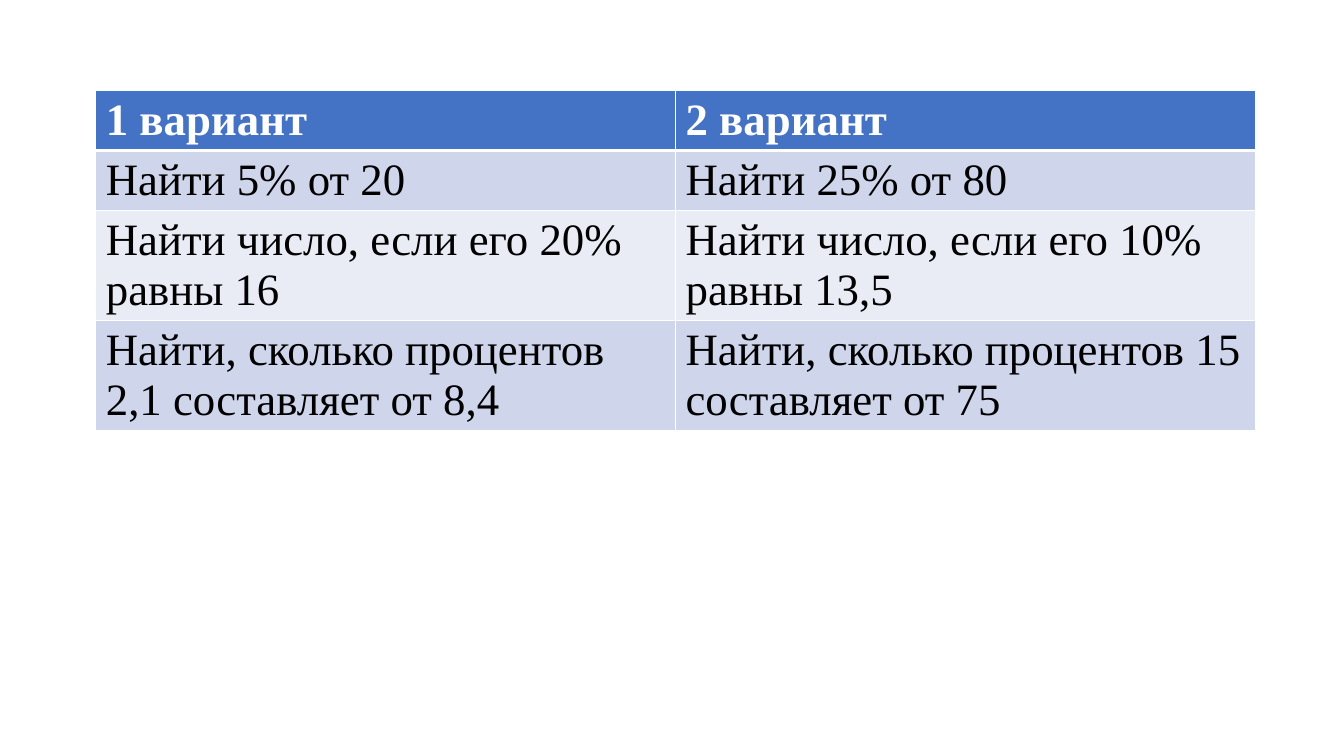
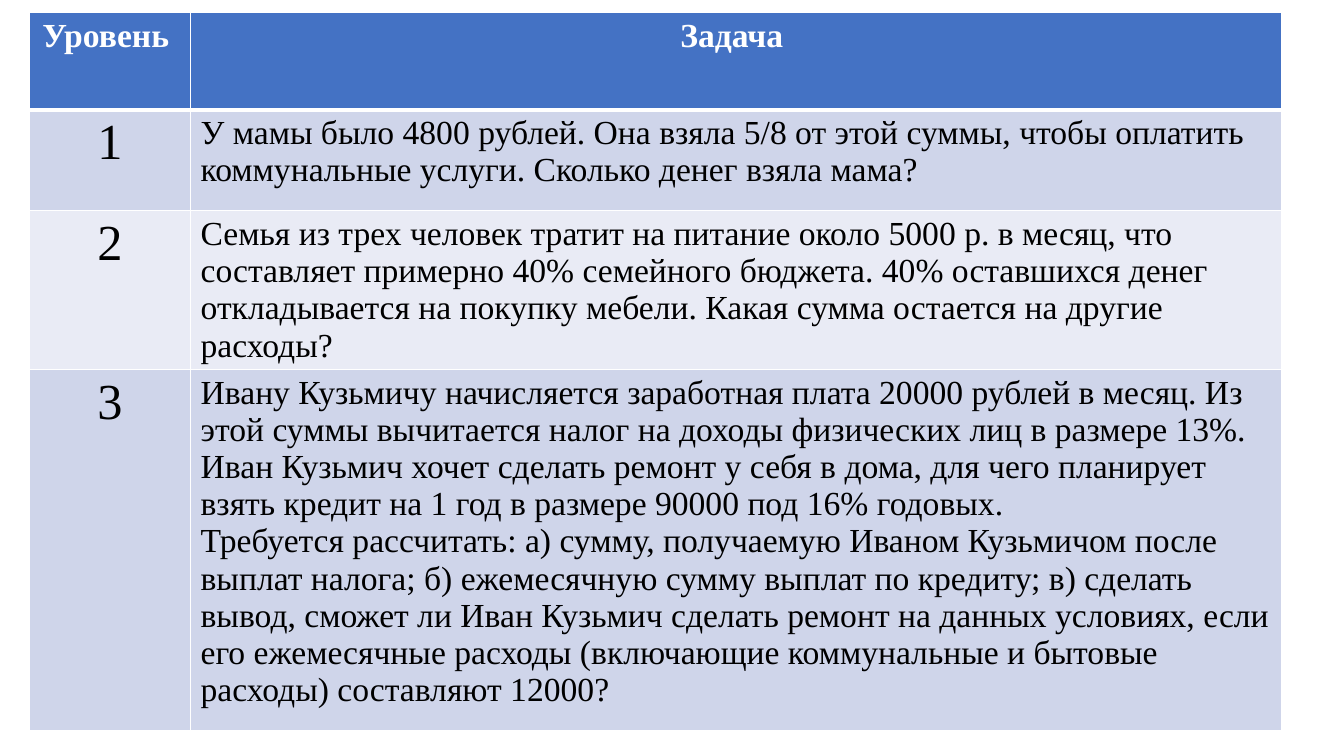
from lxml import etree
from pptx import Presentation
from pptx.dml.color import RGBColor
from pptx.enum.text import PP_ALIGN
from pptx.oxml.ns import qn
from pptx.util import Inches, Pt

LEFT, CENTER = PP_ALIGN.LEFT, PP_ALIGN.CENTER

THEME = {
    "font": "Times New Roman",
    "header_fill": "4472C4",
    "band_fills": ("CFD5EA", "E9EBF5"),
    "border": "FFFFFF",
    "header_text": "FFFFFF",
    "body_text": "000000",
    "thin": 1,
    "thick": 3,
    "task": 24,
    "variant": 32,
    "level": 36,
}

# Content: the first row is the header, a list in a cell holds paragraphs
VARIANTS = {
    "at": (0.95, 0.9),
    "columns": (5.75, 5.75),
    "heights": (0.59, 0.59, 1.09, 1.09),
    "header_size": THEME["variant"],
    "header_align": LEFT,
    "body_sizes": (THEME["variant"], THEME["variant"]),
    "body_aligns": (LEFT, LEFT),
    "rows": [
        ("1 вариант", "2 вариант"),
        ("Найти 5% от 20", "Найти 25% от 80"),
        ("Найти число, если его 20% равны 16",
         "Найти число, если его 10% равны 13,5"),
        ("Найти, сколько процентов 2,1 составляет от 8,4",
         "Найти, сколько процентов 15 составляет от 75"),
    ],
}

LEVELS = {
    "at": (0.29, 0.12),
    "columns": (1.6, 10.82),
    "heights": (0.97, 1, 1.43, 3.58),
    "header_size": THEME["task"],
    "header_align": CENTER,
    "body_sizes": (THEME["level"], THEME["task"]),
    "body_aligns": (CENTER, LEFT),
    "rows": [
        ("Уровень ", "Задача "),
        ("1", "У мамы было 4800 рублей. Она взяла 5/8 от этой суммы, чтобы "
              "оплатить коммунальные услуги. Сколько денег взяла мама?"),
        ("2", "Семья из трех человек тратит на питание около 5000 р. в месяц, "
              "что составляет примерно 40% семейного бюджета. 40% оставшихся "
              "денег откладывается на покупку мебели. Какая сумма остается на "
              "другие расходы?"),
        ("3", ["Ивану Кузьмичу начисляется заработная плата 20000 рублей в "
               "месяц. Из этой суммы вычитается налог на доходы физических лиц "
               "в размере 13%. Иван Кузьмич хочет сделать ремонт у себя в дома, "
               "для чего планирует взять кредит на 1 год в размере 90000 под "
               "16% годовых.",
               "Требуется рассчитать: а) сумму, получаемую Иваном Кузьмичом "
               "после выплат налога; б) ежемесячную сумму выплат по кредиту; "
               "в) сделать вывод, сможет ли Иван Кузьмич сделать ремонт на "
               "данных условиях, если его ежемесячные расходы (включающие "
               "коммунальные и бытовые расходы) составляют 12000?"]),
    ],
}


def set_borders(cell, row):
    """Thin white lines, with a thick one between header and body."""
    widths = dict.fromkeys(("lnL", "lnR", "lnT", "lnB"), THEME["thin"])
    if row == 0:
        widths["lnB"] = THEME["thick"]
    elif row == 1:
        widths["lnT"] = THEME["thick"]
    properties = cell._tc.get_or_add_tcPr()
    for side, width in widths.items():
        line = etree.SubElement(properties, qn(f"a:{side}"), w=str(Pt(width)))
        fill = etree.SubElement(line, qn("a:solidFill"))
        etree.SubElement(fill, qn("a:srgbClr"), val=THEME["border"])


def write_cell(cell, content, align, color, font_format):
    paragraphs = [content] if isinstance(content, str) else content
    cell.text_frame.text = "\n".join(paragraphs)
    for paragraph in cell.text_frame.paragraphs:
        paragraph.alignment = align
        for run in paragraph.runs:
            for name, value in font_format.items():
                setattr(run.font, name, value)
            run.font.color.rgb = RGBColor.from_string(color)


def add_task_table(slide, tasks):
    columns, heights, rows = tasks["columns"], tasks["heights"], tasks["rows"]
    left, top = tasks["at"]
    table = slide.shapes.add_table(
        len(rows), len(columns), Inches(left), Inches(top),
        Inches(sum(columns)), Inches(sum(heights))).table
    for column, width in zip(table.columns, columns):
        column.width = Inches(width)
    for r, (contents, height) in enumerate(zip(rows, heights)):
        table.rows[r].height = Inches(height)
        header = r == 0
        bands = THEME["band_fills"]
        fill = THEME["header_fill"] if header else bands[(r - 1) % len(bands)]
        color = THEME["header_text"] if header else THEME["body_text"]
        for c, content in enumerate(contents):
            cell = table.cell(r, c)
            size = tasks["header_size"] if header else tasks["body_sizes"][c]
            align = tasks["header_align"] if header else tasks["body_aligns"][c]
            set_borders(cell, r)
            cell.fill.solid()
            cell.fill.fore_color.rgb = RGBColor.from_string(fill)
            write_cell(cell, content, align, color,
                       {"name": THEME["font"], "size": Pt(size), "bold": header})


def main():
    deck = Presentation()
    deck.slide_width, deck.slide_height = Inches(13.33), Inches(7.5)
    blank = deck.slide_layouts[6]
    for tasks in (VARIANTS, LEVELS):
        add_task_table(deck.slides.add_slide(blank), tasks)
    deck.save("out.pptx")


if __name__ == "__main__":
    main()
